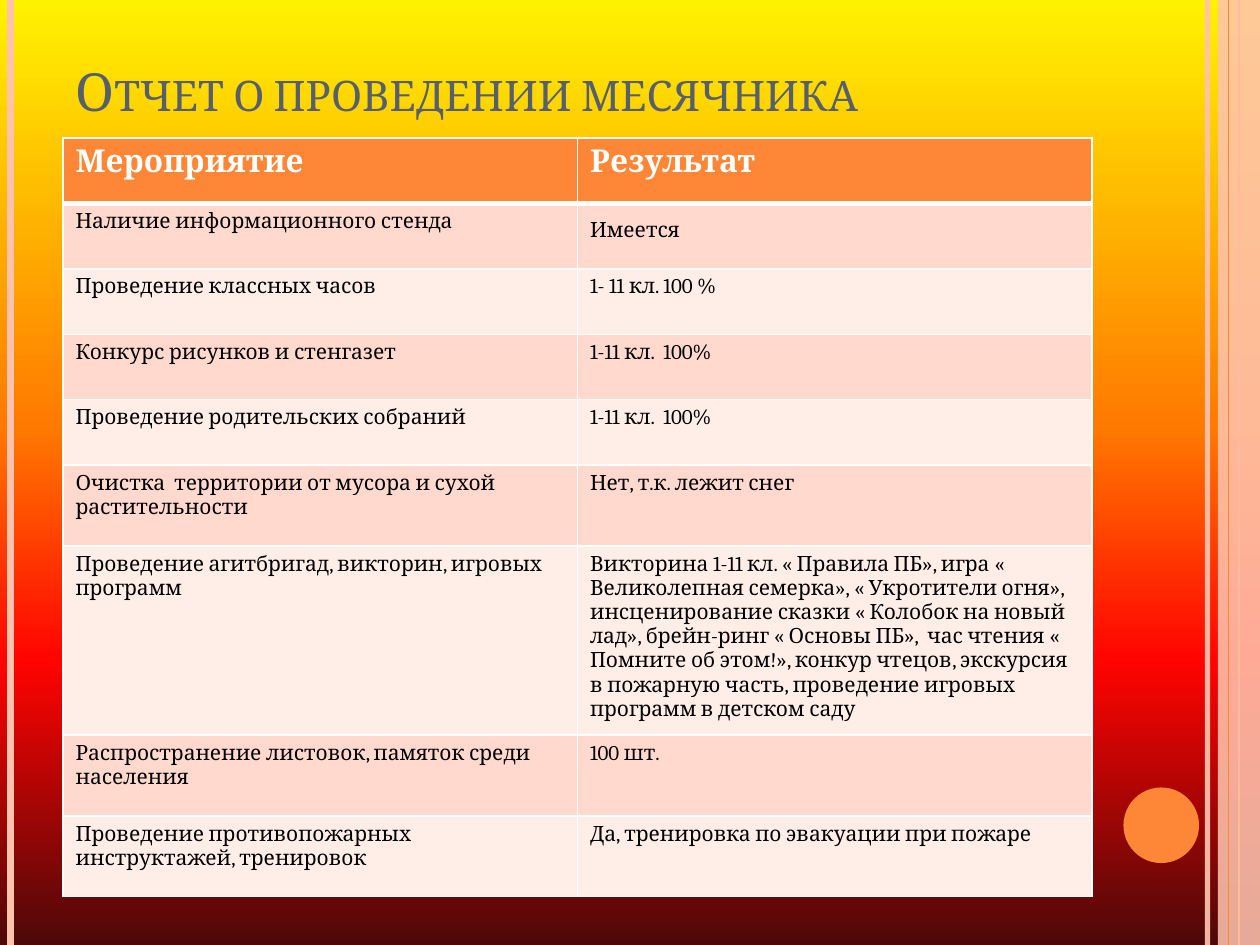
from copy import deepcopy
from dataclasses import dataclass

from lxml import etree
from pptx import Presentation
from pptx.dml.color import RGBColor
from pptx.enum.shapes import MSO_CONNECTOR, MSO_SHAPE
from pptx.enum.text import MSO_ANCHOR
from pptx.oxml.ns import qn
from pptx.util import Pt

LINE = MSO_CONNECTOR.STRAIGHT
RECT, OVAL = MSO_SHAPE.RECTANGLE, MSO_SHAPE.OVAL
BOTTOM = MSO_ANCHOR.BOTTOM
WIDE, HIGH = 720, 540


@dataclass(frozen=True)
class Theme:
    font: str = "Cambria"
    orange: str = "FE8637"
    peach: str = "FEC3AE"
    slate: str = "575F6D"
    white: str = "FFFFFF"
    black: str = "000000"
    bands: tuple = ("FFD9CE", "FFEDE8")
    sky: tuple = ((0, "FFF200"), (45, "FF7A00"), (70, "FF0300"), (100, "4D0808"))
    title: int = 30
    head: int = 18
    body: int = 12


T = Theme()

ROWS = [
    ("Мероприятие", "Результат"),
    ("Наличие информационного стенда", "Имеется"),
    ("Проведение классных часов", "1- 11 кл. 100 %"),
    ("Конкурс рисунков и стенгазет", "1-11 кл.  100%"),
    ("Проведение родительских собраний", "1-11 кл.  100%"),
    ("Очистка  территории от мусора и сухой растительности",
     "Нет, т.к. лежит снег"),
    ("Проведение агитбригад, викторин, игровых программ",
     "Викторина 1-11 кл. « Правила ПБ», игра « Великолепная семерка», "
     "« Укротители огня»,  инсценирование сказки « Колобок на новый лад», "
     "брейн-ринг « Основы ПБ»,  час чтения « Помните об этом!», конкур чтецов, "
     "экскурсия в пожарную часть, проведение игровых программ в детском саду"),
    ("Распространение листовок, памяток среди населения", "100 шт."),
    ("Проведение противопожарных инструктажей, тренировок",
     "Да, тренировка по эвакуации при пожаре"),
]
HEIGHTS = [37.44] * 5 + [46.2, 101.5] + [46.2] * 2


def rgb(code):
    return RGBColor.from_string(code)


def write(para, text, size, color, bold=False):
    run = para.add_run()
    run.text = text
    look = {"name": T.font, "size": Pt(size), "bold": bold}
    for key, value in look.items():
        setattr(run.font, key, value)
    run.font.color.rgb = rgb(color)
    return run


def fade(part, percent):
    """Set the opacity of the first colour in a part."""
    color = part.find(".//" + qn("a:srgbClr"))
    etree.SubElement(color, qn("a:alpha"), val=str(percent * 1000))


def backdrop(slide):
    fill = slide.background.fill
    fill.gradient()
    fill.gradient_angle = 270
    stops = slide.element.find(".//" + qn("a:gsLst"))
    model = deepcopy(stops[0])
    for stop in list(stops):
        stops.remove(stop)
    for _ in T.sky:
        stops.append(deepcopy(model))
    for stop, (place, color) in zip(fill.gradient_stops, T.sky):
        stop.position = place / 100
        stop.color.rgb = rgb(color)


def stripe(slide, x, top, height, color, width, alpha=100):
    line = slide.shapes.add_connector(LINE, Pt(x), Pt(top), Pt(x), Pt(top + height))
    line.line.color.rgb = rgb(color)
    line.line.width = Pt(width)
    props = line.element.spPr
    if alpha < 100:
        fade(props, alpha)
    etree.SubElement(props, qn("a:effectLst"))


def block(slide, kind, box, color, alpha=100):
    shape = slide.shapes.add_shape(kind, *map(Pt, box))
    shape.shadow.inherit = False
    shape.fill.solid()
    shape.fill.fore_color.rgb = rgb(color)
    shape.line.fill.background()
    if alpha < 100:
        fade(shape.element.spPr, alpha)


def frame(slide, box):
    """Side stripes, right band and disc."""
    left, top, width, height = box
    right = left + width
    stripe(slide, right - 30, top, height, T.peach, 3, 93)
    stripe(slide, left + 6, top, height, T.peach, 4.5)
    stripe(slide, right - 12, top, height, T.orange, 1.5)
    block(slide, RECT, (right - 24, top, 24, height), T.peach, 87)
    stripe(slide, right - 18, top, height, T.orange, 0.75)
    block(slide, OVAL, (right - 78, top + 450, 43.2, 43.2), T.orange)


def heading(slide, box):
    text = slide.shapes.add_textbox(*map(Pt, box)).text_frame
    text.word_wrap = True
    text.vertical_anchor = BOTTOM
    run = write(text.paragraphs[0], "Отчет о проведении месячника", T.title, T.slate)
    run.font._element.set("cap", "small")


def edge(cell, base):
    """White borders, drawn ahead of the cell fill."""
    props = cell._tc.get_or_add_tcPr()
    sides = {"a:lnL": 1, "a:lnR": 1, "a:lnT": 1, "a:lnB": base}
    for spot, (tag, width) in enumerate(sides.items()):
        line = etree.Element(qn(tag), w=str(Pt(width)))
        solid = etree.SubElement(line, qn("a:solidFill"))
        etree.SubElement(solid, qn("a:srgbClr"), val=T.white)
        props.insert(spot, line)


def report(slide, box):
    left, top, width, _ = box
    holder = slide.shapes.add_table(len(ROWS), 2, *map(Pt, box))
    grid = holder.table
    for col in grid.columns:
        col.width = Pt(width / 2)
    for r, (texts, height) in enumerate(zip(ROWS, HEIGHTS)):
        grid.rows[r].height = Pt(height)
        head = r == 0
        size, ink = (T.head, T.white) if head else (T.body, T.black)
        back = T.orange if head else T.bands[(r - 1) % 2]
        for c, text in enumerate(texts):
            cell = grid.cell(r, c)
            cell.fill.solid()
            cell.fill.fore_color.rgb = rgb(back)
            # The rule under the header is heavier on both sides of the seam
            edge(cell, 3 if head else 1)
            if r == 1:
                cell._tc.tcPr.find(qn("a:lnT")).set("w", str(Pt(3)))
            write(cell.text_frame.paragraphs[0], text, size, ink, head)
    # A larger trailing space sets the line height of the first answer
    write(grid.cell(1, 1).text_frame.paragraphs[0], " ", T.head, T.black)


def main():
    deck = Presentation()
    deck.slide_width, deck.slide_height = Pt(WIDE), Pt(HIGH)
    slide = deck.slides.add_slide(deck.slide_layouts[6])
    backdrop(slide)
    frame(slide, (0, 0, WIDE, HIGH))
    heading(slide, (36, 21.6, 588, 51.8))
    report(slide, (36, 78.75, 588, sum(HEIGHTS)))
    deck.save("out.pptx")


if __name__ == "__main__":
    main()
